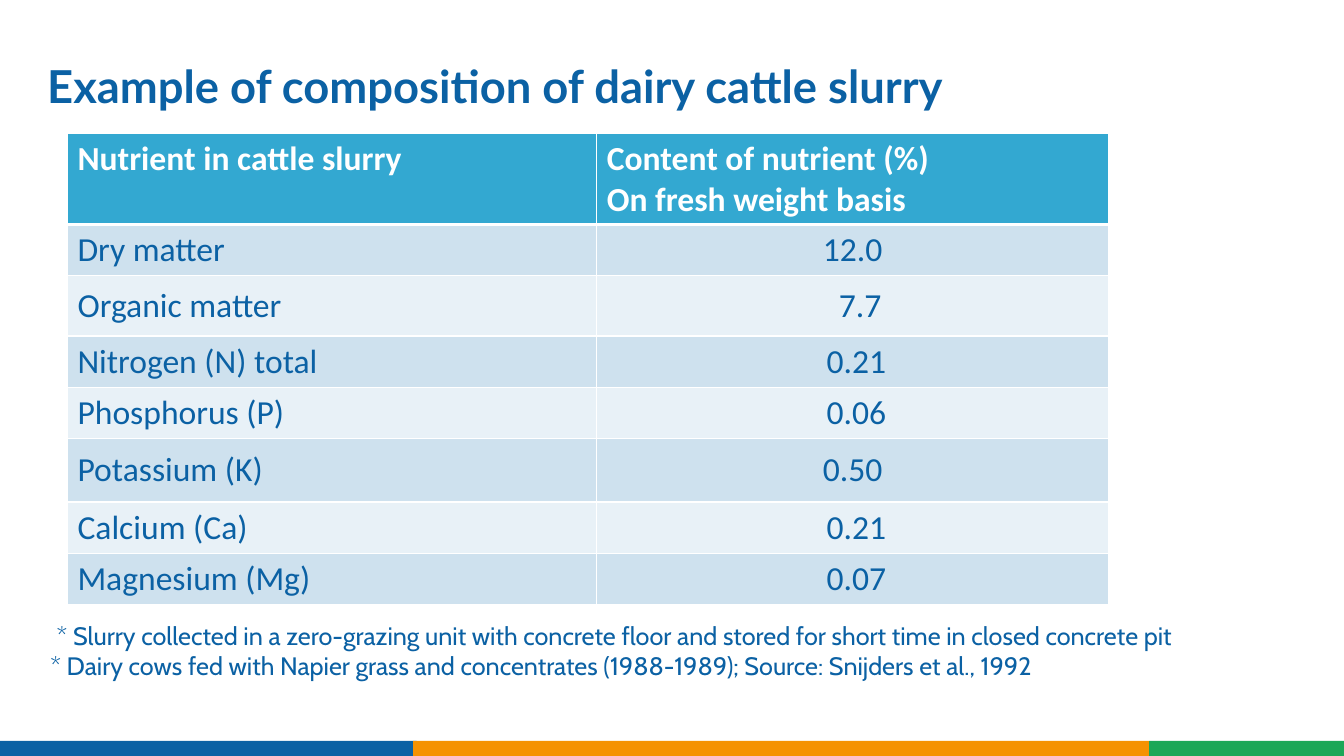
import pptx
import pptx.util
import pptx.dml.color
import pptx.enum.shapes
import pptx.enum.text
import pptx.oxml

Cm = pptx.util.Cm
ALIGN = pptx.enum.text.PP_ALIGN
ANCHOR = pptx.enum.text.MSO_ANCHOR
COLORS = {
    "blue": "0B61A4", "orange": "F59201", "green": "1BA757", "white": "FFFFFF",
    "header": "33A8D1", "band_dark": "CEE1EE", "band_light": "E8F1F7",
}
NS = "http://schemas.openxmlformats.org/drawingml/2006/main"


def rgb(name):
    return pptx.dml.color.RGBColor.from_string(COLORS[name])


class SlideBuilder:
    """Holds the style and the current slide."""

    formats = {
        "title": {"name": "Lato", "size": pptx.util.Pt(32.4), "bold": True},
        "header": {"name": "Calibri", "size": pptx.util.Pt(24), "bold": True},
        "body": {"name": "Calibri", "size": pptx.util.Pt(24), "bold": False},
        "note": {"name": "Cabin", "size": pptx.util.Pt(18), "bold": False},
    }

    def __init__(self, prs):
        self.s = prs.slides.add_slide(prs.slide_layouts[6])

    def fill_text(self, tf, lines, style, color="blue", align=ALIGN.LEFT):
        for i, line in enumerate(lines):
            p = tf.paragraphs[0] if i == 0 else tf.add_paragraph()
            p.alignment = align
            r = p.add_run()
            r.text = line
            for key, value in self.formats[style].items():
                setattr(r.font, key, value)
            r.font.color.rgb = rgb(color)

    def bar(self, left, top, width, height, color):
        sp = self.s.shapes.add_shape(pptx.enum.shapes.MSO_SHAPE.RECTANGLE,
                                     Cm(left), Cm(top), Cm(width), Cm(height))
        sp.shadow.inherit = False
        sp.fill.solid()
        sp.fill.fore_color.rgb = rgb(color)
        sp.line.fill.background()

    def text(self, left, top, width, height, lines, style, margin=0.0):
        tf = self.s.shapes.add_textbox(Cm(left), Cm(top), Cm(width), Cm(height)).text_frame
        tf.word_wrap = True
        for side in ("left", "top", "right", "bottom"):
            setattr(tf, f"margin_{side}", Cm(margin))
        self.fill_text(tf, lines, style)
        return tf

    def border(self, cell, widths):
        tcPr = cell._tc.get_or_add_tcPr()
        for side, width in widths.items():
            tcPr.append(pptx.oxml.parse_xml(
                f'<a:ln{side} xmlns:a="{NS}" w="{int(pptx.util.Pt(width))}"><a:solidFill>'
                f'<a:srgbClr val="{COLORS["white"]}"/></a:solidFill></a:ln{side}>'))

    def cell(self, cell, lines, fill, row, **text):
        self.border(cell, {"L": 1, "R": 1, "T": 3 if row == 1 else 1,
                           "B": 3 if row == 0 else 1})
        cell.fill.solid()
        cell.fill.fore_color.rgb = rgb(fill)
        cell.vertical_anchor = ANCHOR.MIDDLE if row else ANCHOR.TOP
        self.fill_text(cell.text_frame, lines, **text)

    def table(self, left, top, widths, heights, header, rows):
        table = self.s.shapes.add_table(len(heights), len(widths), Cm(left), Cm(top),
                                        Cm(sum(widths)), Cm(sum(heights))).table
        for column, width in zip(table.columns, widths):
            column.width = Cm(width)
        for row, height in zip(table.rows, heights):
            row.height = Cm(height)
        for c, lines in enumerate(header):
            self.cell(table.cell(0, c), lines, "header", 0, style="header", color="white")
        for i, (nutrient, content, shift) in enumerate(rows, 1):
            fill = "band_dark" if i % 2 else "band_light"
            self.cell(table.cell(i, 0), [nutrient], fill, i, style="body")
            value = table.cell(i, 1)
            self.cell(value, [content], fill, i, style="body", align=ALIGN.CENTER)
            value.margin_left = Cm(0.25 + shift)


def main():
    prs = pptx.Presentation()
    prs.slide_width, prs.slide_height = Cm(33.87), Cm(19.05)
    b = SlideBuilder(prs)

    # Footer stripe
    for left, width, color in ((0, 10.5, "blue"), (10.41, 18.55, "orange"),
                               (28.96, 4.91, "green")):
        b.bar(left, 18.67, width, 0.38, color)

    # Title
    tf = b.text(0.94, 1.5, 29.2, 1.6, ["Example of composition of dairy cattle slurry"],
                "title", 0.25)
    tf.margin_top = Cm(0.13)
    tf.paragraphs[0].line_spacing = 0.9

    # Nutrient table: name, content, shift of the centred value
    rows = [
        ("Dry matter", "12.0", 0), ("Organic matter", "7.7", 0.38),
        ("Nitrogen (N) total", "0.21", 0.19), ("Phosphorus (P)", "0.06", 0.19),
        ("Potassium (K)", "0.50", 0), ("Calcium (Ca)", "0.21", 0.19),
        ("Magnesium (Mg)", "0.07", 0.19),
    ]
    b.table(1.7, 3.36, (13.34, 12.9), (2.3, 1.29, 1.52, 1.29, 1.29, 1.6, 1.29, 1.29),
            (["Nutrient in cattle slurry"],
             ["Content of nutrient (%)", "On fresh weight basis"]), rows)

    # Footnotes
    tf = b.text(1.27, 15.62, 29.2, 2.3, [
        "* Slurry collected in a zero-grazing unit with concrete floor and stored "
        "for short time in closed concrete pit",
        "* Dairy cows fed with Napier grass and concentrates (1988-1989); "
        "Source: Snijders et al., 1992",
    ], "note")
    for p, first in zip(tf.paragraphs, (-0.58, -0.74)):
        pPr = p._p.get_or_add_pPr()
        pPr.set("marL", str(int(Cm(0.74))))
        pPr.set("indent", str(int(Cm(first))))

    prs.save("out.pptx")


if __name__ == "__main__":
    main()
